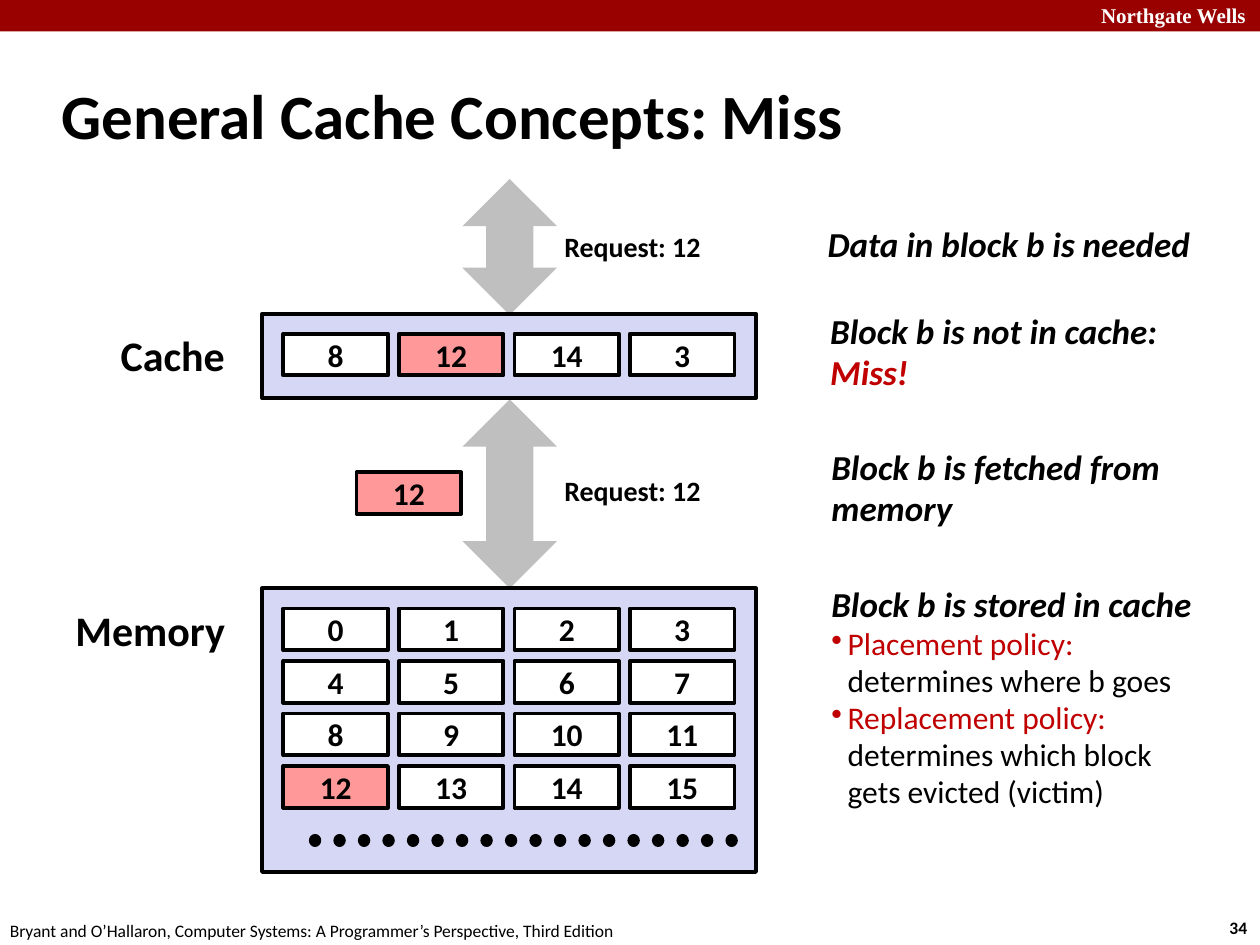
from dataclasses import dataclass

import lxml.etree
import pptx
import pptx.dml.color
import pptx.enum.dml
import pptx.enum.shapes
import pptx.enum.text
import pptx.oxml.ns
import pptx.util

Inches = pptx.util.Inches
Align = pptx.enum.text.PP_ALIGN
Anchor = pptx.enum.text.MSO_ANCHOR
Preset = pptx.enum.shapes.MSO_SHAPE


@dataclass(frozen=True)
class Theme:
    font: str = "Calibri"
    banner_font: str = "Times New Roman"
    black: str = "000000"
    white: str = "FFFFFF"
    banner: str = "990000"
    arrow: str = "BFBFBF"
    store: str = "D6D6F5"
    highlight: str = "FF9999"
    accent: str = "C00000"
    title: float = 36
    label: float = 24
    step: float = 20
    body: float = 18
    request: float = 16
    banner_size: float = 12
    footer: float = 10
    outline: float = 2.25
    dots: float = 7


THEME = Theme()


@dataclass(frozen=True)
class Area:
    left: float
    top: float
    width: float
    height: float

    def lengths(self) -> tuple:
        return tuple(Inches(v) for v in (self.left, self.top, self.width, self.height))


@dataclass(frozen=True)
class Span:
    text: str
    color: str = THEME.black


@dataclass(frozen=True)
class Para:
    spans: tuple[Span, ...]
    size: float
    bold: bool = True
    italic: bool = False
    font: str = THEME.font
    align: Align = Align.LEFT
    spacing: float = 1.0
    bullet: bool = False


def plain(text: str, size: float, **style) -> Para:
    return Para((Span(text),), size, **style)


def step(text: str, color: str = THEME.black) -> Para:
    return Para((Span(text, color),), THEME.step, italic=True, spacing=0.98)


def policy(name: str, meaning: str) -> Para:
    spans = (Span(name + "\n", THEME.accent), Span(meaning))
    return Para(spans, THEME.body, bold=False, spacing=0.98, bullet=True)


def rgb(color: str) -> pptx.dml.color.RGBColor:
    return pptx.dml.color.RGBColor.from_string(color)


def add_bullet(paragraph) -> None:
    properties = paragraph._p.get_or_add_pPr()
    properties.set("marL", str(Inches(0.13)))
    properties.set("indent", str(-Inches(0.13)))
    bullet = lxml.etree.SubElement(properties, pptx.oxml.ns.qn("a:buChar"))
    bullet.set("char", "•")


def write(frame, paras: tuple[Para, ...]) -> None:
    for index, para in enumerate(paras):
        paragraph = frame.add_paragraph() if index else frame.paragraphs[0]
        paragraph.alignment = para.align
        paragraph.line_spacing = para.spacing
        if para.bullet:
            add_bullet(paragraph)
        paragraph.font.name = para.font
        paragraph.font.size = pptx.util.Pt(para.size)
        paragraph.font.bold = para.bold
        paragraph.font.italic = para.italic
        paragraph.font.color.rgb = rgb(para.spans[0].color)
        for span in para.spans:
            for number, line in enumerate(span.text.split("\n")):
                if number:
                    paragraph.add_line_break()
                if line:
                    run = paragraph.add_run()
                    run.text = line
                    if len(para.spans) > 1:
                        run.font.color.rgb = rgb(span.color)


def add_text(page, area: Area, *paras: Para, anchor: Anchor = Anchor.TOP) -> None:
    frame = page.shapes.add_textbox(*area.lengths()).text_frame
    frame.word_wrap = False
    frame.vertical_anchor = anchor
    write(frame, paras)


def add_box(page, area: Area, fill: str, outlined: bool = True,
            preset: Preset = Preset.RECTANGLE):
    box = page.shapes.add_shape(preset, *area.lengths())
    box.shadow.inherit = False
    box.fill.solid()
    box.fill.fore_color.rgb = rgb(fill)
    if outlined:
        box.line.color.rgb = rgb(THEME.black)
        box.line.width = pptx.util.Pt(THEME.outline)
    else:
        box.line.fill.background()
    return box


def add_block(page, left: float, top: float, number: int, highlighted: bool) -> None:
    fill = THEME.highlight if highlighted else THEME.white
    frame = add_box(page, Area(left, top, 0.83, 0.33), fill).text_frame
    frame.vertical_anchor = Anchor.MIDDLE
    write(frame, (plain(str(number), THEME.body, align=Align.CENTER),))


def add_blocks(page, top: float, numbers: tuple[int, ...], requested: int) -> None:
    for index, number in enumerate(numbers):
        row, column = divmod(index, 4)
        add_block(page, 2.25 + column * 2.75 / 3, top + row * 1.25 / 3,
                  number, number == requested)


def add_dots(page, left: float, right: float, top: float) -> None:
    dots = page.shapes.add_connector(
        pptx.enum.shapes.MSO_CONNECTOR.STRAIGHT,
        Inches(left), Inches(top), Inches(right), Inches(top))
    dots.line.color.rgb = rgb(THEME.black)
    dots.line.width = pptx.util.Pt(THEME.dots)
    dots.line.dash_style = pptx.enum.dml.MSO_LINE.ROUND_DOT
    properties = dots._element.spPr
    properties.find(pptx.oxml.ns.qn("a:ln")).set("cap", "rnd")
    lxml.etree.SubElement(properties, pptx.oxml.ns.qn("a:effectLst"))


def main() -> None:
    deck = pptx.Presentation()
    deck.slide_width, deck.slide_height = Inches(10), Inches(7.5)
    page = deck.slides.add_slide(deck.slide_layouts[6])
    requested = 12

    add_box(page, Area(0, 0, 10, 0.25), THEME.banner, outlined=False)
    add_text(page, Area(8.64, -0.03, 1.43, 0.3),
             Para((Span("Northgate Wells", THEME.white),), THEME.banner_size,
                  font=THEME.banner_font))
    add_text(page, Area(9.66, 7.23, 0.37, 0.27), plain("34", THEME.footer))
    add_text(page, Area(-0.02, 7.25, 5.08, 0.27),
             plain("Bryant and O’Hallaron, Computer Systems: "
                   "A Programmer’s Perspective, Third Edition", THEME.footer, bold=False))
    add_text(page, Area(0.39, 0.49, 8.3, 0.83),
             plain("General Cache Concepts: Miss", THEME.title), anchor=Anchor.MIDDLE)

    for top, height, request_top in ((1.42, 1.08, 1.77), (3.17, 1.5, 3.71)):
        add_box(page, Area(3.67, top, 0.75, height), THEME.arrow, outlined=False,
                preset=Preset.UP_DOWN_ARROW)
        add_text(page, Area(4.37, request_top, 1.3, 0.37),
                 plain(f"Request: {requested}", THEME.request, align=Align.CENTER))

    add_box(page, Area(2.08, 2.49, 3.92, 0.67), THEME.store)
    add_blocks(page, 2.65, (8, 12, 14, 3), requested)
    add_box(page, Area(2.08, 4.67, 3.92, 2.25), THEME.store)
    add_blocks(page, 4.83, tuple(range(16)), requested)
    add_dots(page, 2.5, 5.83, 6.67)
    add_block(page, 2.83, 3.75, requested, True)

    add_text(page, Area(0.86, 2.57, 1.04, 0.5), plain("Cache", THEME.label))
    add_text(page, Area(0.5, 4.75, 1.4, 0.5), plain("Memory", THEME.label))

    steps = (
        (Area(6.47, 1.73, 3.09, 0.43), (step("Data in block b is needed"),)),
        (Area(6.49, 2.42, 2.81, 0.76),
         (step("Block b is not in cache:"), step("Miss!", THEME.accent))),
        (Area(6.5, 3.5, 2.83, 0.76),
         (step("Block b is fetched from"), step("memory"))),
        (Area(6.5, 4.58, 3.07, 1.92),
         (step("Block b is stored in cache"),
          policy("Placement policy:", "determines where b goes"),
          policy("Replacement policy:",
                 "determines which block\ngets evicted (victim)"))),
    )
    for area, paras in steps:
        add_text(page, area, *paras, anchor=Anchor.MIDDLE)

    deck.save("out.pptx")


if __name__ == "__main__":
    main()
